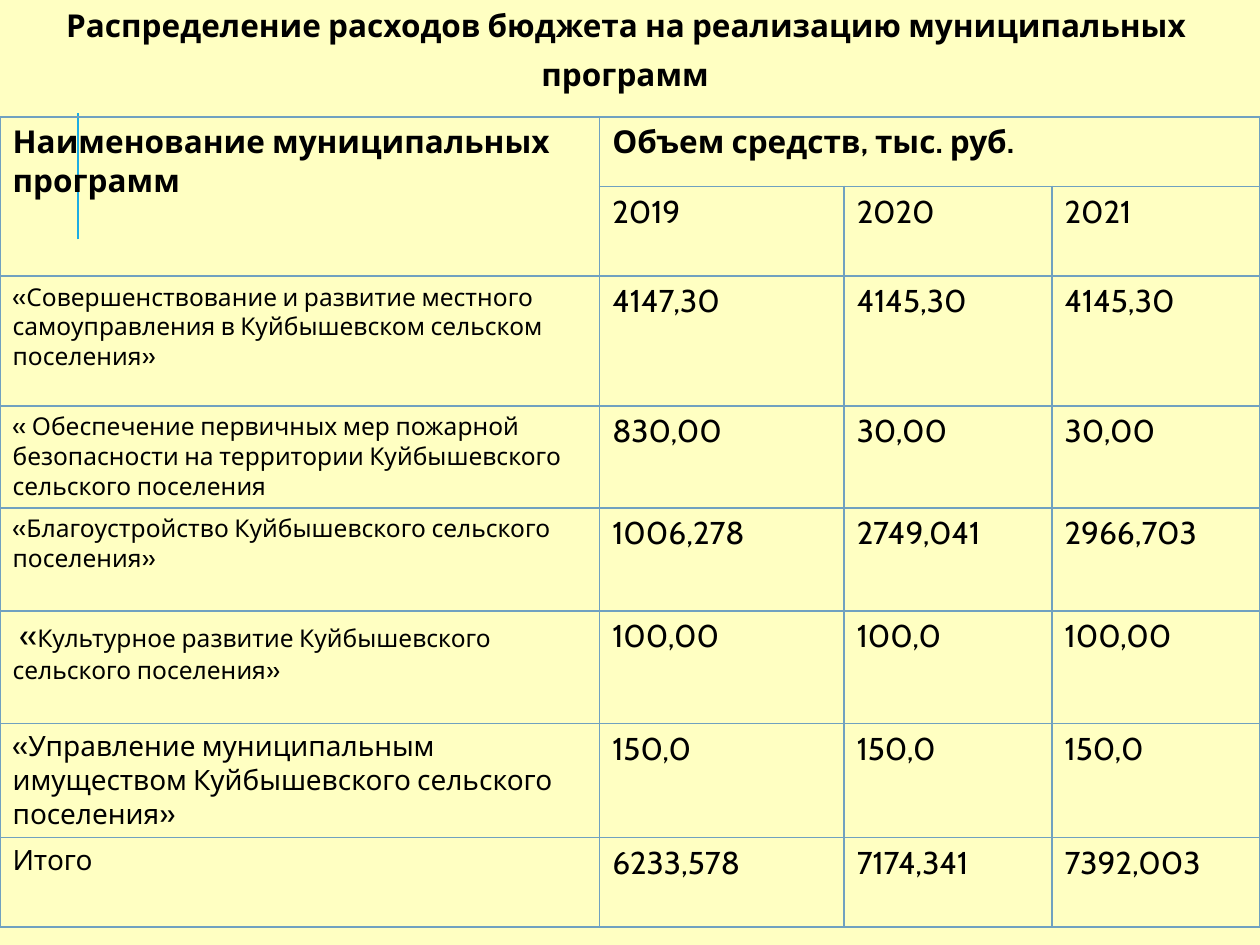
from lxml import etree
from pptx import Presentation
from pptx.dml.color import RGBColor
from pptx.enum.shapes import MSO_CONNECTOR
from pptx.enum.text import MSO_ANCHOR, PP_ALIGN
from pptx.oxml.ns import qn
from pptx.util import Inches, Pt

STRAIGHT = MSO_CONNECTOR.STRAIGHT
TOP = MSO_ANCHOR.TOP
CENTER = PP_ALIGN.CENTER
TITLE_ONLY = 5

COLORS = {"background": "FFFFC2", "text": "000000", "border": "70A1C0", "accent": "1CADE4"}
FONT = "Cabin"
BORDER_WIDTH = 1
SIDES = ("a:lnL", "a:lnR", "a:lnT", "a:lnB")

TITLE = [
    [("Распределение расходов бюджета на реализацию муниципальных ", 18)],
    [("программ", 18), (" ", 24)],
]
YEARS = ["2019", "2020", "2021"]
PROGRAMS = [
    ([("«Совершенствование и развитие местного самоуправления в Куйбышевском сельском поселения»", 14)],
     ["4147,30", "4145,30", "4145,30"]),
    ([("« Обеспечение первичных мер пожарной безопасности на территории Куйбышевского сельского поселения", 14)],
     ["830,00", "30,00", "30,00"]),
    ([("«Благоустройство Куйбышевского сельского поселения»", 14)],
     ["1006,278", "2749,041", "2966,703"]),
    ([(" «", 18), ("Культурное развитие Куйбышевского сельского поселения»", 14)],
     ["100,00", "100,0", "100,00"]),
    ([("«Управление муниципальным имуществом Куйбышевского сельского поселения»", 16)],
     ["150,0", "150,0", "150,0"]),
    ([("Итого", 16)], ["6233,578", "7174,341", "7392,003"]),
]
COLUMN_WIDTHS = [4.76, 1.94, 1.65, 1.65]
ROW_HEIGHTS = [0.55, 0.7, 1.03, 0.8, 0.82, 0.89, 0.9, 0.71]


class SlideBuilder:
    def __init__(self, slide):
        self.slide = slide

    def background(self):
        fill = self.slide.background.fill
        fill.solid()
        fill.fore_color.rgb = RGBColor.from_string(COLORS["background"])

    def add_runs(self, paragraph, runs, bold=False):
        for text, size in runs:
            run = paragraph.add_run()
            run.text = text
            for name, value in {"name": FONT, "size": Pt(size), "bold": bold}.items():
                setattr(run.font, name, value)
            run.font.color.rgb = RGBColor.from_string(COLORS["text"])

    def title(self, lines, left, top, width, height):
        shape = self.slide.shapes.title
        box = {"left": left, "top": top, "width": width, "height": height}
        for name, value in box.items():
            setattr(shape, name, Inches(value))
        frame = shape.text_frame
        frame.word_wrap = True
        frame.vertical_anchor = TOP
        for index, runs in enumerate(lines):
            paragraph = frame.add_paragraph() if index else frame.paragraphs[0]
            paragraph.alignment = CENTER
            self.add_runs(paragraph, runs, bold=True)

    def line(self, start_x, start_y, end_x, end_y):
        ends = [Inches(value) for value in (start_x, start_y, end_x, end_y)]
        connector = self.slide.shapes.add_connector(STRAIGHT, *ends)
        connector.line.color.rgb = RGBColor.from_string(COLORS["accent"])
        connector.line.width = Pt(1.5)
        etree.SubElement(connector._element.spPr, qn("a:effectLst"))

    def table(self, left, top, column_widths, row_heights):
        box = [Inches(value) for value in (left, top, sum(column_widths), sum(row_heights))]
        table = self.slide.shapes.add_table(len(row_heights), len(column_widths), *box).table
        table.first_row = False
        table.horz_banding = False
        for column, width in zip(table.columns, column_widths):
            column.width = Inches(width)
        for row, height in zip(table.rows, row_heights):
            row.height = Inches(height)
        for cell in table.iter_cells():
            self.borders(cell)
            cell.fill.background()
        return table

    def borders(self, cell):
        properties = cell._tc.get_or_add_tcPr()
        for side in SIDES:
            line = etree.SubElement(properties, qn(side), w=str(Pt(BORDER_WIDTH)))
            fill = etree.SubElement(line, qn("a:solidFill"))
            etree.SubElement(fill, qn("a:srgbClr"), val=COLORS["border"])

    def cell(self, table, row, column, runs, bold=False):
        self.add_runs(table.cell(row, column).text_frame.paragraphs[0], runs, bold)


def main():
    presentation = Presentation()
    presentation.slide_width = Inches(10)
    presentation.slide_height = Inches(7.5)
    slide = presentation.slides.add_slide(presentation.slide_layouts[TITLE_ONLY])
    builder = SlideBuilder(slide)
    builder.background()
    builder.line(0.62, 1.9, 0.62, 0.9)
    builder.title(TITLE, 0, 0, 10, 0.81)

    table = builder.table(0, 0.93, COLUMN_WIDTHS, ROW_HEIGHTS)
    table.cell(0, 0).merge(table.cell(1, 0))
    table.cell(0, 1).merge(table.cell(0, 3))
    builder.cell(table, 0, 0, [("Наименование муниципальных программ", 18)], bold=True)
    builder.cell(table, 0, 1, [("Объем средств, тыс. руб.", 18)], bold=True)
    rows = [([], YEARS)] + PROGRAMS
    for row, (name, values) in enumerate(rows, start=1):
        if name:
            builder.cell(table, row, 0, name)
        for column, value in enumerate(values, start=1):
            builder.cell(table, row, column, [(value, 18)])
    presentation.save("out.pptx")


if __name__ == "__main__":
    main()
